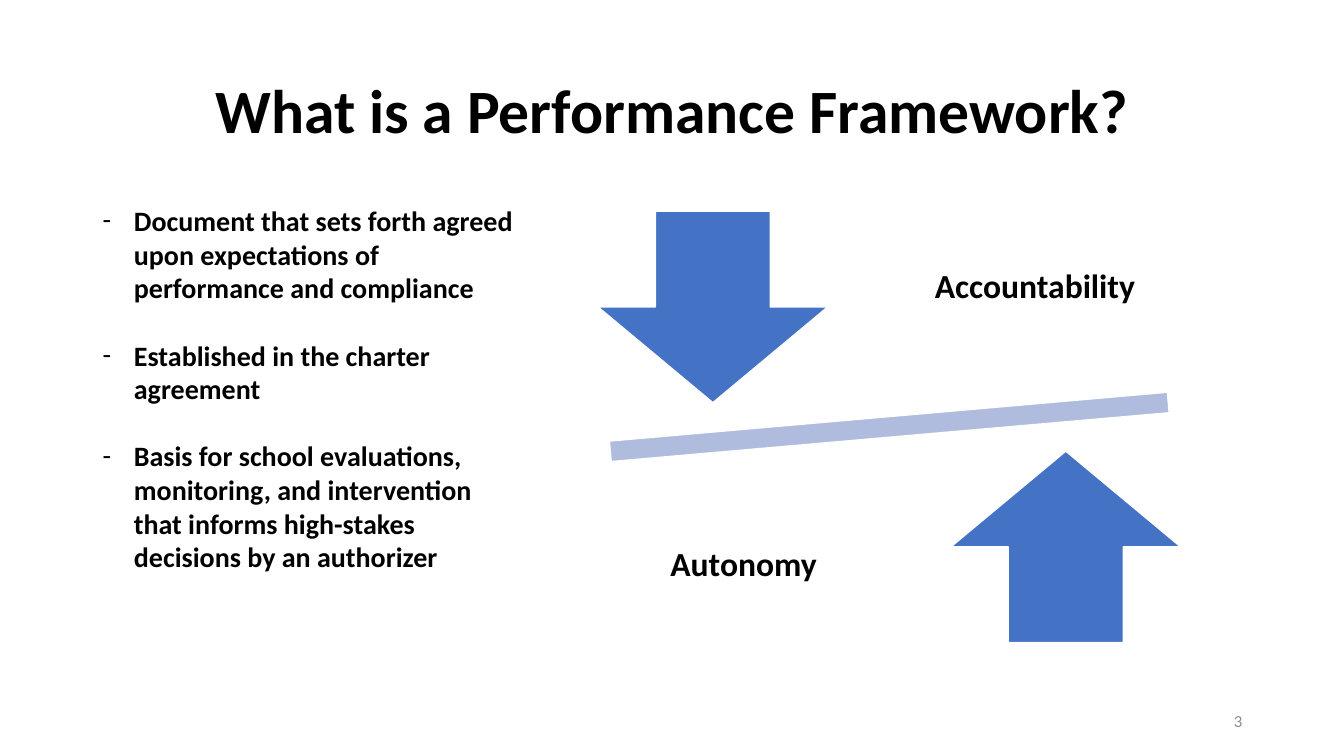
from lxml import etree
from pptx import Presentation
from pptx.dml.color import RGBColor
from pptx.enum.shapes import MSO_SHAPE
from pptx.enum.text import MSO_ANCHOR, PP_ALIGN
from pptx.oxml.ns import qn
from pptx.util import Inches, Pt

DOWN, UP, BEAM = MSO_SHAPE.DOWN_ARROW, MSO_SHAPE.UP_ARROW, MSO_SHAPE.MATH_MINUS
TOP, MIDDLE = MSO_ANCHOR.TOP, MSO_ANCHOR.MIDDLE
LEFT, CENTER, RIGHT = PP_ALIGN.LEFT, PP_ALIGN.CENTER, PP_ALIGN.RIGHT

WIDTH, HEIGHT = Inches(13.33), Inches(7.5)
FONT = "Calibri"
COLORS = {"text": "000000", "number": "8C8C8C", "arrow": "4472C4",
          "beam": "B0BCDE", "outline": "FFFFFF"}
PIVOT = (66.17, 56.47)
ARROW_SIZE, ARROW_OFFSET = (17.1, 25.33), (13.13, 15.87)
LABEL_SIZE, LABEL_OFFSET = (18.23, 26.67), (10.84, 18.4)
BEAM_SIZE = (56.71, 11.6)
SIDES = [(DOWN, -1, "Accountability"), (UP, 1, "Autonomy")]
POINTS = [
    "Document that sets forth agreed upon expectations of performance and compliance",
    "Established in the charter agreement",
    "Basis for school evaluations, monitoring, and intervention that informs "
    "high-stakes decisions by an authorizer",
]


def color(name):
    return RGBColor.from_string(COLORS[name])


def place(left, top, width, height):
    return (round(WIDTH * left / 100), round(HEIGHT * top / 100),
            round(WIDTH * width / 100), round(HEIGHT * height / 100))


def around_pivot(size, offset=(0, 0), side=1):
    left, top = (center + side * shift - length / 2
                 for center, shift, length in zip(PIVOT, offset, size))
    return place(left, top, *size)


def add_text(page, area, lines, size, align, anchor=MIDDLE, ink="text",
             bold=True, spacing=1.0):
    frame = page.shapes.add_textbox(*area).text_frame
    frame.word_wrap = True
    frame.vertical_anchor = anchor
    frame.text = "\n".join(lines)
    for para in frame.paragraphs:
        para.alignment = align
        para.line_spacing = spacing
        para.font.name = FONT
        para.font.size = Pt(size)
        para.font.bold = bold
        para.font.color.rgb = color(ink)
    return frame


def add_dashes(frame, indent, gap):
    for para in frame.paragraphs:
        para.space_after = Pt(gap)
        properties = para._p.get_or_add_pPr()
        properties.set("marL", str(indent))
        properties.set("indent", str(-indent))
        etree.SubElement(properties, qn("a:buFont")).set("typeface", FONT)
        etree.SubElement(properties, qn("a:buChar")).set("char", "-")
        properties.append(properties.find(qn("a:defRPr")))


def add_figure(page, kind, area, fill, rotation=0):
    figure = page.shapes.add_shape(kind, *area)
    figure.shadow.inherit = False
    figure.rotation = rotation
    figure.fill.solid()
    figure.fill.fore_color.rgb = color(fill)
    figure.line.color.rgb = color("outline")
    figure.line.width = Pt(1)


def add_balance(page):
    add_figure(page, BEAM, around_pivot(BEAM_SIZE), "beam", 355)
    for arrow, side, label in SIDES:
        add_figure(page, arrow, around_pivot(ARROW_SIZE, ARROW_OFFSET, side), "arrow")
        label_area = around_pivot(LABEL_SIZE, (-LABEL_OFFSET[0], LABEL_OFFSET[1]), side)
        add_text(page, label_area, [label], 24, CENTER, spacing=0.9)


def main():
    deck = Presentation()
    deck.slide_width, deck.slide_height = WIDTH, HEIGHT
    page = deck.slides.add_slide(deck.slide_layouts[6])
    add_text(page, place(6.9, 5.33, 86.26, 19.33),
             ["What is a Performance Framework?"], 44, CENTER, spacing=0.9)
    add_balance(page)
    add_text(page, place(70.67, 92.67, 22.5, 5.33), ["3"], 12, RIGHT,
             ink="number", bold=False)
    points = add_text(page, place(6.9, 26.27, 32.78, 54.8), POINTS, 20, LEFT, TOP)
    add_dashes(points, Inches(0.31), 24)
    deck.save("out.pptx")


if __name__ == "__main__":
    main()
